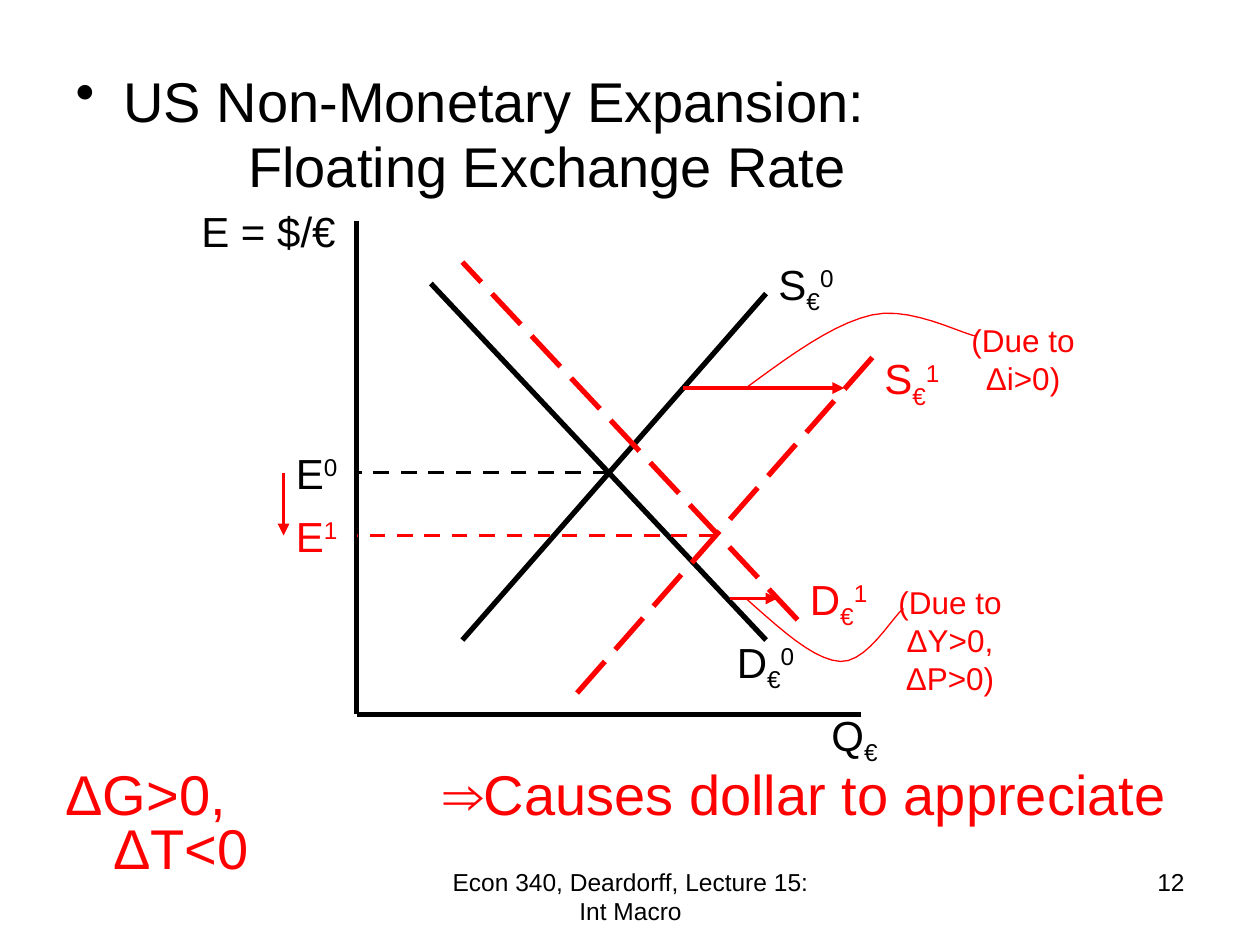
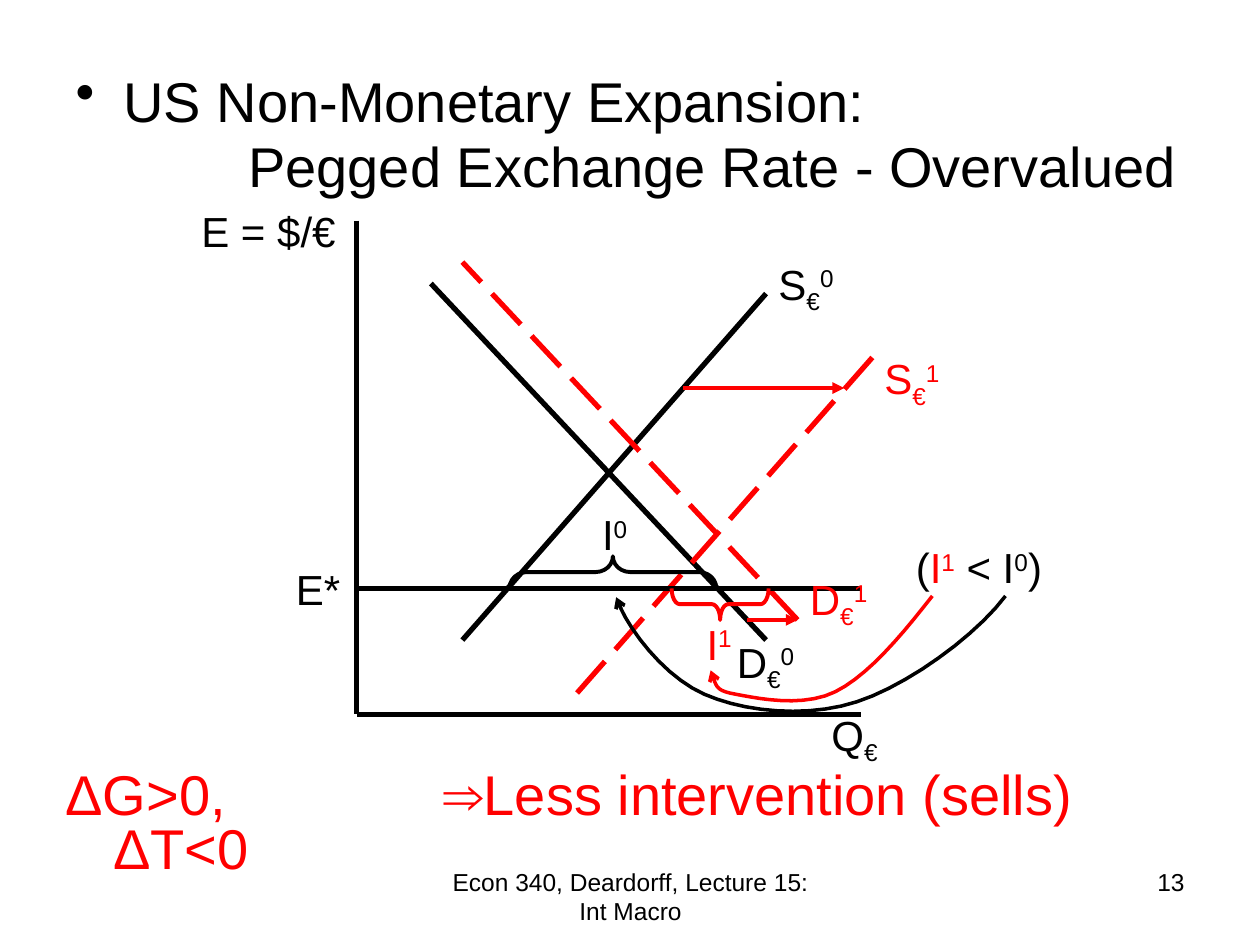
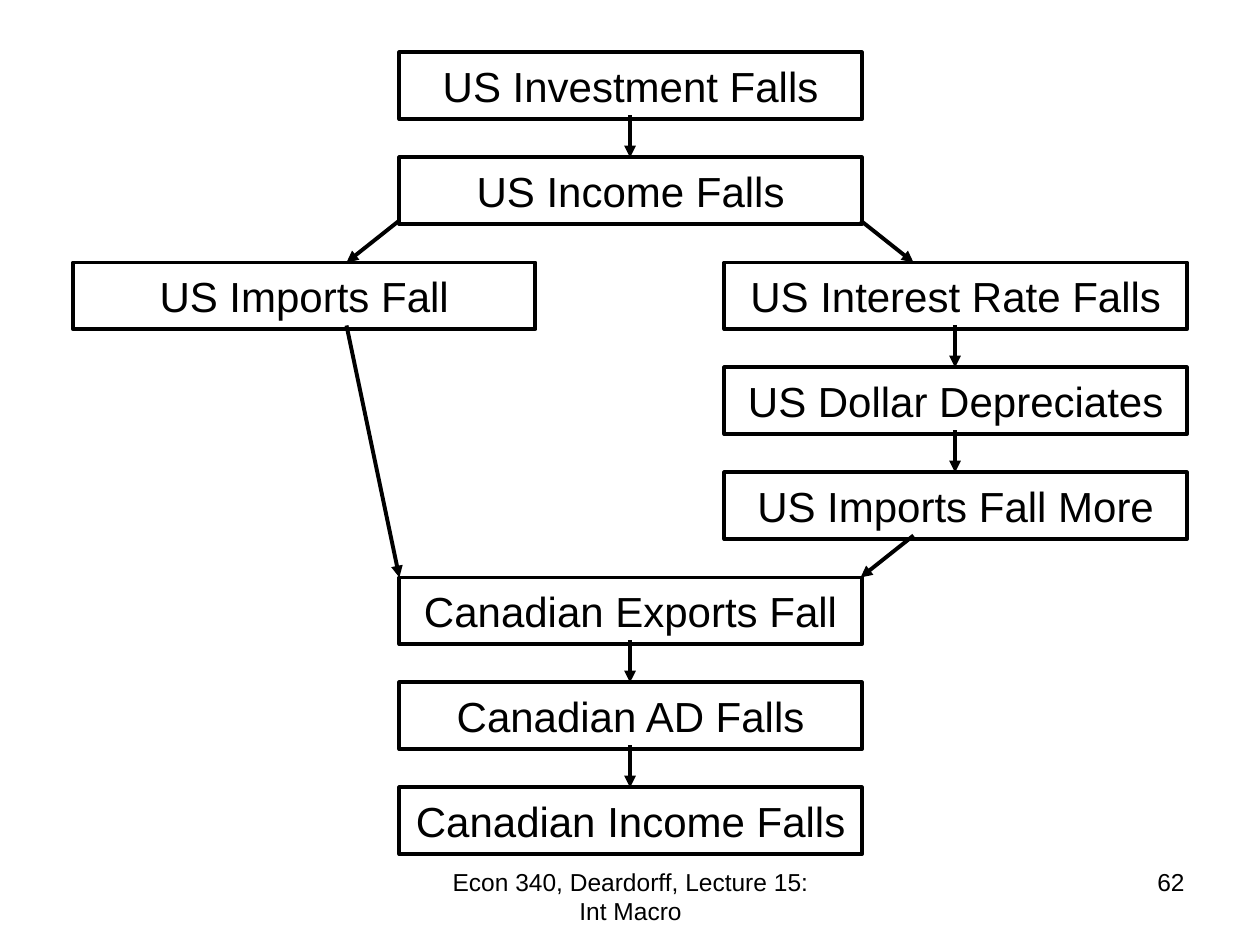
from typing import NamedTuple

from lxml import etree
from pptx import Presentation
from pptx.dml.color import RGBColor
from pptx.enum.dml import MSO_LINE
from pptx.enum.shapes import MSO_CONNECTOR, MSO_SHAPE
from pptx.enum.text import MSO_ANCHOR, MSO_AUTO_SIZE, PP_ALIGN
from pptx.oxml.ns import qn
from pptx.shapes.base import BaseShape
from pptx.slide import Slide
from pptx.text.text import TextFrame
from pptx.util import Inches, Pt

BLACK = RGBColor(0x00, 0x00, 0x00)
RED = RGBColor(0xFF, 0x00, 0x00)
FONT = "Arial"
FOOTER = "Econ 340, Deardorff, Lecture 15: Int Macro"

LEFT, CENTER, RIGHT = PP_ALIGN.LEFT, PP_ALIGN.CENTER, PP_ALIGN.RIGHT
TOP, MIDDLE = MSO_ANCHOR.TOP, MSO_ANCHOR.MIDDLE
NO_FIT = MSO_AUTO_SIZE.NONE
STRAIGHT = MSO_CONNECTOR.STRAIGHT
DASH, LONG_DASH = MSO_LINE.DASH, MSO_LINE.LONG_DASH
RECTANGLE, BRACE = MSO_SHAPE.RECTANGLE, MSO_SHAPE.RIGHT_BRACE

TITLE_ONLY_LAYOUT, BLANK_LAYOUT = 5, 6
HANGING = 0.38
TIGHT_LINES = 0.8
SUBSCRIPT, SUPERSCRIPT = -25, 30
CURVE_STEPS = 10

Point = tuple[float, float]


class Span(NamedTuple):
    text: str
    baseline: int = 0
    color: RGBColor | None = None


class Label(NamedTuple):
    left: float
    top: float
    width: float
    spans: tuple[Span, ...]
    color: RGBColor = BLACK
    size: float = 24
    align: PP_ALIGN = LEFT
    height: float = 0.5


class Line(NamedTuple):
    start: Point
    end: Point
    color: RGBColor = BLACK
    width: float = 3
    dash: MSO_LINE | None = None
    head: str = ""


class Curve(NamedTuple):
    """Cubic Bezier path: a start point, then three points for each segment."""
    points: tuple[Point, ...]
    color: RGBColor
    width: float
    head: str = ""


class Brace(NamedTuple):
    left: float
    top: float
    length: float
    rotation: int
    bend: float
    color: RGBColor


class Step(NamedTuple):
    text: str
    left: float
    row: int


def plain(text: str) -> tuple[Span, ...]:
    return (Span(text),)


def variable(symbol: str, period: str = "", currency: str = "€") -> tuple[Span, ...]:
    """A symbol with the currency below and the period above."""
    parts = Span(symbol), Span(currency, SUBSCRIPT), Span(period, SUPERSCRIPT)
    return tuple(part for part in parts if part.text)


def arrow(start: Point, end: Point, color: RGBColor = BLACK) -> Line:
    return Line(start, end, color, 2.25, head="triangle")


AXES_AND_CURVES = (
    Line((2.83, 1.75), (2.83, 5.67)),
    Line((2.83, 5.67), (6.83, 5.67)),
    Line((3.67, 5.08), (6.08, 2.33)),
    Line((6.08, 5.08), (3.42, 2.25)),
    Line((6.33, 4.92), (3.67, 2.08), RED, dash=LONG_DASH),
    Line((4.58, 5.5), (7, 2.75), RED, dash=LONG_DASH),
    arrow((5.42, 3.08), (6.7, 3.08), RED),
)
MARKET_LABELS = (
    Label(1.5, 1.58, 1.33, plain("E = $/€")),
    Label(6.5, 5.58, 0.67, variable("Q")),
    Label(6.08, 2, 0.75, variable("S", "0")),
    Label(5.75, 5, 0.83, variable("D", "0")),
    Label(6.92, 2.75, 0.83, variable("S", "1"), RED),
    Label(6.33, 4.5, 0.83, variable("D", "1"), RED),
)

FLOATING_LINES = (
    Line((4.83, 3.75), (2.83, 3.75), BLACK, 2.25, DASH),
    Line((5.67, 4.25), (2.83, 4.25), RED, 2.25, DASH),
    arrow((5.79, 4.75), (6.17, 4.75), RED),
    arrow((2.25, 3.75), (2.25, 4.25), RED),
)
FLOATING_LABELS = (
    Label(2.25, 3.5, 1.33, variable("E", "0", "")),
    Label(2.25, 4, 1.33, variable("E", "1", ""), RED),
    Label(7, 4.58, 1.08, plain("(Due to ΔY>0, ΔP>0)"), RED, 18, CENTER, 1),
    Label(7.58, 2.5, 1.08, plain("(Due to Δi>0)"), RED, 18, CENTER, 0.7),
)
FLOATING_CURVES = (
    Curve(((5.92, 3.08), (6.26, 2.83), (6.61, 2.57), (6.92, 2.5),
           (7.22, 2.43), (7.61, 2.64), (7.75, 2.67)), RED, 0.75),
    Curve(((5.92, 4.75), (6.19, 4.99), (6.46, 5.24), (6.67, 5.25),
           (6.88, 5.26), (7.08, 4.9), (7.17, 4.83)), RED, 0.75),
)

PEGGED_LINES = (
    Line((2.83, 4.67), (6.83, 4.67)),
    arrow((5.93, 4.92), (6.33, 4.92), RED),
)
PEGGED_LABELS = (
    Label(2.25, 4.42, 1.33, plain("E*")),
    Label(4.68, 3.99, 0.83, variable("I", "0", "")),
    Label(5.51, 4.86, 0.83, variable("I", "1", ""), RED),
    Label(7.17, 4.25, 2.17, (
        Span("("), Span("I", color=RED), Span("1", SUPERSCRIPT, RED),
        Span(" < I"), Span("0", SUPERSCRIPT), Span(")"))),
)
PEGGED_CURVES = (
    Curve(((7.4, 4.73), (7.15, 5.05), (6.89, 5.36), (6.63, 5.49),
           (6.37, 5.62), (6, 5.54), (5.84, 5.51),
           (5.67, 5.48), (5.69, 5.45), (5.64, 5.32)), RED, 2, "arrow"),
    Curve(((7.98, 4.73), (7.74, 5.05), (7.2, 5.44), (6.8, 5.57),
           (6.4, 5.7), (5.91, 5.65), (5.59, 5.51),
           (5.27, 5.37), (4.97, 4.98), (4.89, 4.74)), BLACK, 2, "arrow"),
)
PEGGED_BRACES = (
    Brace(4.74, 3.72, 1.64, 270, 0.55, BLACK),
    Brace(5.59, 4.41, 0.77, 90, 0.26, RED),
)

STEP_WIDTH, STEP_HEIGHT = 3.67, 0.53
FIRST_ROW, ROW_PITCH, ARROW_OFFSET = 5 / 12, 5 / 6, 0.5
LEFT_COLUMN, MIDDLE_COLUMN, RIGHT_COLUMN = 0.58, 3.17, 5.75
MIDDLE_X, RIGHT_X = 5, 7.58
STEPS = (
    Step("US Investment Falls", MIDDLE_COLUMN, 0),
    Step("US Income Falls", MIDDLE_COLUMN, 1),
    Step("US Imports Fall", LEFT_COLUMN, 2),
    Step("US Interest Rate Falls", RIGHT_COLUMN, 2),
    Step("US Dollar Depreciates", RIGHT_COLUMN, 3),
    Step("US Imports Fall More", RIGHT_COLUMN, 4),
    Step("Canadian Exports Fall", MIDDLE_COLUMN, 5),
    Step("Canadian AD Falls", MIDDLE_COLUMN, 6),
    Step("Canadian Income Falls", MIDDLE_COLUMN, 7),
)
# Each link: start x, start row, end x, end row
STEP_LINKS = (
    (MIDDLE_X, 0, MIDDLE_X, 1),
    (3.17, 1, 2.75, 2),
    (6.83, 1, 7.25, 2),
    (RIGHT_X, 2, RIGHT_X, 3),
    (RIGHT_X, 3, RIGHT_X, 4),
    (2.75, 2, 3.17, 5),
    (7.25, 4, 6.83, 5),
    (MIDDLE_X, 5, MIDDLE_X, 6),
    (MIDDLE_X, 6, MIDDLE_X, 7),
)


def format_runs(frame: TextFrame, size: float, color: RGBColor) -> None:
    for paragraph in frame.paragraphs:
        for run in paragraph.runs:
            run.font.name = FONT
            run.font.size = Pt(size)
            run.font.color.rgb = color


def add_label(slide: Slide, label: Label) -> TextFrame:
    box = slide.shapes.add_textbox(Inches(label.left), Inches(label.top),
                                   Inches(label.width), Inches(label.height))
    frame = box.text_frame
    frame.word_wrap = True
    paragraph = frame.paragraphs[0]
    paragraph.alignment = label.align
    for span in label.spans:
        paragraph.add_run().text = span.text
    format_runs(frame, label.size, label.color)
    for span, run in zip(label.spans, paragraph.runs):
        if span.baseline:
            run.font._element.set("baseline", str(span.baseline * 1000))
        if span.color is not None:
            run.font.color.rgb = span.color
    return frame


def style_line(shape: BaseShape, color: RGBColor, width: float, head: str = "") -> None:
    shape.line.color.rgb = color
    shape.line.width = Pt(width)
    if head:
        outline = shape.element.spPr.find(qn("a:ln"))
        etree.SubElement(outline, qn("a:tailEnd"), type=head)


def add_line(slide: Slide, line: Line) -> None:
    connector = slide.shapes.add_connector(
        STRAIGHT, *(Inches(value) for value in line.start + line.end))
    if line.dash is not None:
        connector.line.dash_style = line.dash
    style_line(connector, line.color, line.width, line.head)
    etree.SubElement(connector.element.spPr, qn("a:effectLst"))


def bezier_point(controls: tuple[Point, ...], t: float) -> Point:
    weights = (1 - t) ** 3, 3 * t * (1 - t) ** 2, 3 * t ** 2 * (1 - t), t ** 3
    x, y = (sum(w * p[axis] for w, p in zip(weights, controls)) for axis in (0, 1))
    return Inches(x), Inches(y)


def add_curve(slide: Slide, curve: Curve) -> None:
    x, y = curve.points[0]
    outline = [bezier_point(curve.points[first:first + 4], step / CURVE_STEPS)
               for first in range(0, len(curve.points) - 1, 3)
               for step in range(1, CURVE_STEPS + 1)]
    builder = slide.shapes.build_freeform(Inches(x), Inches(y))
    builder.add_line_segments(outline, close=False)
    shape = builder.convert_to_shape()
    shape.fill.background()
    shape.shadow.inherit = False
    style_line(shape, curve.color, curve.width, curve.head)


def add_brace(slide: Slide, brace: Brace) -> None:
    shape = slide.shapes.add_shape(BRACE, Inches(brace.left), Inches(brace.top),
                                   Inches(0.25), Inches(brace.length))
    shape.rotation = brace.rotation
    shape.adjustments[0] = brace.bend
    shape.fill.background()
    shape.shadow.inherit = False
    style_line(shape, brace.color, 2.25)


def add_step(slide: Slide, step: Step) -> None:
    box = slide.shapes.add_shape(
        RECTANGLE, Inches(step.left), Inches(FIRST_ROW + step.row * ROW_PITCH),
        Inches(STEP_WIDTH), Inches(STEP_HEIGHT))
    box.fill.background()
    box.shadow.inherit = False
    style_line(box, BLACK, 2.25)
    frame = box.text_frame
    frame.text = step.text
    frame.word_wrap = True
    frame.vertical_anchor = MIDDLE
    frame.paragraphs[0].alignment = CENTER
    format_runs(frame, 24, BLACK)


def set_indent(paragraph, margin: float, first_line: float = 0) -> None:
    properties = paragraph._p.get_or_add_pPr()
    properties.set("marL", str(Inches(margin)))
    properties.set("indent", str(Inches(first_line)))


def set_heading(slide: Slide, topic: str, regime: str) -> None:
    title = slide.shapes.title
    title.left, title.top = Inches(0.5), Inches(0.58)
    title.width, title.height = Inches(9), Inches(0.83)
    frame = title.text_frame
    frame.text = f"{topic}\n{regime}"
    frame.auto_size = NO_FIT
    frame.vertical_anchor = TOP
    for paragraph in frame.paragraphs:
        paragraph.alignment = LEFT
        paragraph.line_spacing = TIGHT_LINES
        paragraph.space_before = Pt(6.4)
    format_runs(frame, 32, BLACK)
    first, second = frame.paragraphs
    set_indent(first, HANGING, -HANGING)
    etree.SubElement(first._p.get_or_add_pPr(), qn("a:buChar"), char="•")
    set_indent(second, 1.37)


def add_conclusion(slide: Slide, left: float, width: float, text: str) -> None:
    frame = add_label(slide, Label(left, 6.08, width, plain(text), RED, 32, height=0.83))
    paragraph = frame.paragraphs[0]
    paragraph.line_spacing = TIGHT_LINES
    set_indent(paragraph, HANGING, -HANGING)


def add_footer(slide: Slide, number: int) -> None:
    add_label(slide, Label(7.17, 6.83, 2.33, plain(str(number)), BLACK, 14, RIGHT, 0.52))
    add_label(slide, Label(3.42, 6.83, 3.17, plain(FOOTER), BLACK, 14, CENTER, 0.52))


def add_market_slide(deck, number: int, regime: str, effect: str,
                     lines: tuple[Line, ...], labels: tuple[Label, ...],
                     curves: tuple[Curve, ...], braces: tuple[Brace, ...] = ()) -> None:
    """A currency market diagram with a heading and its conclusion."""
    slide = deck.slides.add_slide(deck.slide_layouts[TITLE_ONLY_LAYOUT])
    set_heading(slide, "US Non-Monetary Expansion:", regime)
    for line in AXES_AND_CURVES + lines:
        add_line(slide, line)
    for brace in braces:
        add_brace(slide, brace)
    for label in MARKET_LABELS + labels:
        add_label(slide, label)
    for curve in curves:
        add_curve(slide, curve)
    add_conclusion(slide, 0.42, 2.65, "ΔG>0, ΔT<0")
    add_conclusion(slide, 3.42, 6.17, f"⇒{effect}")
    add_footer(slide, number)


def add_transmission_slide(deck, number: int) -> None:
    slide = deck.slides.add_slide(deck.slide_layouts[BLANK_LAYOUT])
    for step in STEPS:
        add_step(slide, step)
    for start_x, start_row, end_x, end_row in STEP_LINKS:
        start_y = FIRST_ROW + start_row * ROW_PITCH + ARROW_OFFSET
        add_line(slide, arrow((start_x, start_y), (end_x, FIRST_ROW + end_row * ROW_PITCH)))
    add_footer(slide, number)


def main() -> None:
    deck = Presentation()
    deck.slide_width, deck.slide_height = Inches(10), Inches(7.5)
    add_market_slide(deck, 12, "Floating Exchange Rate", "Causes dollar to appreciate",
                     FLOATING_LINES, FLOATING_LABELS, FLOATING_CURVES)
    add_market_slide(deck, 13, "Pegged Exchange Rate - Overvalued",
                     "Less intervention (sells)",
                     PEGGED_LINES, PEGGED_LABELS, PEGGED_CURVES, PEGGED_BRACES)
    add_transmission_slide(deck, 62)
    deck.save("out.pptx")


if __name__ == "__main__":
    main()
